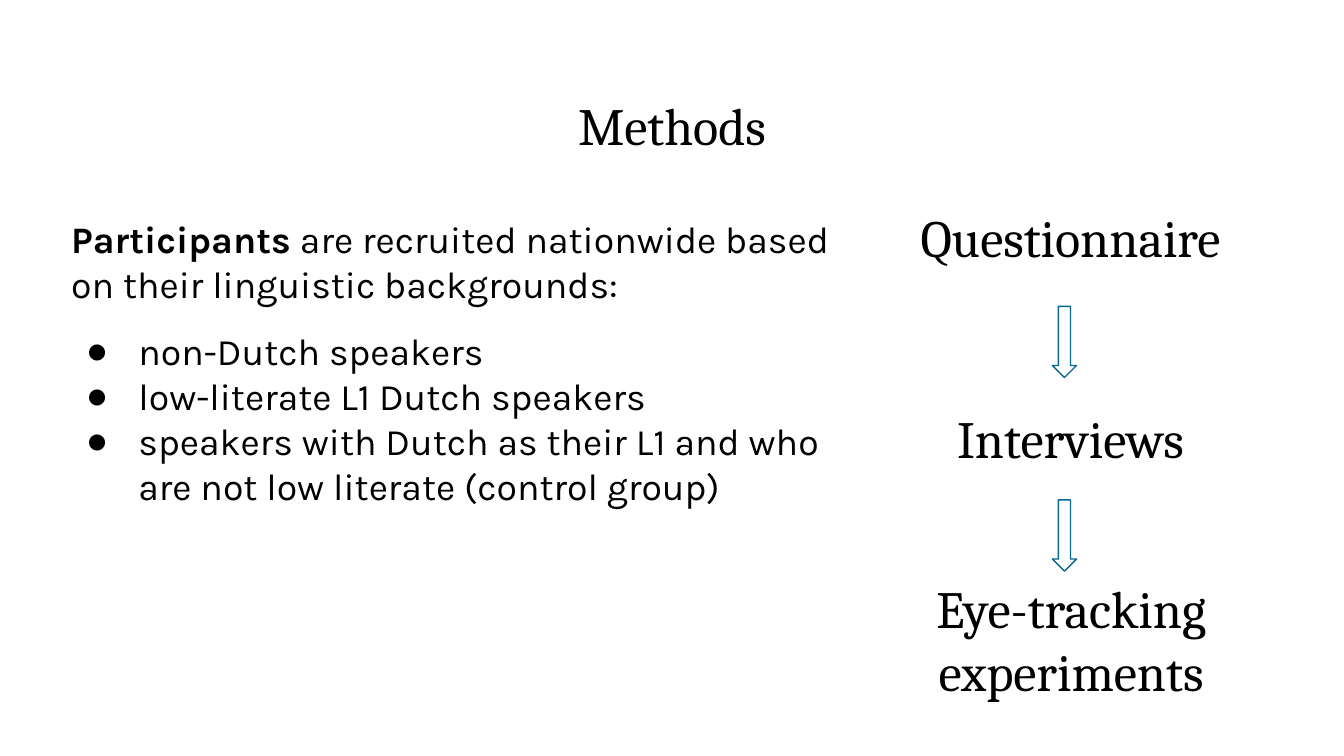
from lxml.etree import SubElement
from pptx import Presentation
from pptx.dml.color import RGBColor
from pptx.enum.shapes import MSO_SHAPE
from pptx.enum.text import MSO_ANCHOR, MSO_AUTO_SIZE, PP_ALIGN
from pptx.oxml.ns import qn
from pptx.util import Inches, Pt

COLORS = {"text": "000000", "arrow_fill": "FFFFFF", "arrow_line": "06688E"}
HEADING_FONT, BODY_FONT = "Cambria", "Karla"

INTRO = ("Participants",
         " are recruited nationwide based on their linguistic backgrounds:")
GROUPS = [
    "non-Dutch speakers",
    "low-literate L1 Dutch speakers",
    "speakers with Dutch as their L1 and who are not low literate (control group)",
]
# Stage label, left, top, width
STAGES = [
    ("Questionnaire", 6.55, 1.43, 2.83),
    ("Interviews", 6.92, 2.92, 2.09),
    ("Eye-tracking experiments", 6.32, 4.19, 3.3),
]
ARROW_TOPS = [2.28, 3.72]


def color(name):
    return RGBColor.from_string(COLORS[name])


def place(shape, left, top, width, height):
    shape.left, shape.top = Inches(left), Inches(top)
    shape.width, shape.height = Inches(width), Inches(height)


def prepare_frame(frame):
    frame.word_wrap = True
    frame.auto_size = MSO_AUTO_SIZE.NONE
    frame.vertical_anchor = MSO_ANCHOR.TOP
    frame.margin_left = frame.margin_right = Inches(0.1)
    frame.margin_top = frame.margin_bottom = Inches(0.1)


def style_run(run, font, size, bold=False):
    run.font.name, run.font.size, run.font.bold = font, Pt(size), bold
    run.font.color.rgb = color("text")


def write_heading(shape, text):
    prepare_frame(shape.text_frame)
    paragraph = shape.text_frame.paragraphs[0]
    paragraph.text = text
    paragraph.alignment = PP_ALIGN.CENTER
    style_run(paragraph.runs[0], HEADING_FONT, 28)


def set_bullet(paragraph, bullet=None):
    properties = paragraph._p.get_or_add_pPr()
    properties.set("marL", str(Inches(0.5) if bullet else 0))
    properties.set("indent", str(Inches(-0.39) if bullet else 0))
    if bullet:
        bullet_color = SubElement(properties, qn("a:buClr"))
        SubElement(bullet_color, qn("a:srgbClr"), val=COLORS["text"])
        SubElement(properties, qn("a:buChar"), char=bullet)
    else:
        SubElement(properties, qn("a:buNone"))


def write_participants(body):
    frame = body.text_frame
    prepare_frame(frame)
    intro = frame.paragraphs[0]
    set_bullet(intro)
    intro.space_before = Pt(0)
    for index, part in enumerate(INTRO):
        run = intro.add_run()
        run.text = part
        style_run(run, BODY_FONT, 20, bold=index == 0)

    for index, group in enumerate(GROUPS):
        item = frame.add_paragraph()
        item.text = group
        set_bullet(item, "●")
        item.space_before = Pt(12 if index == 0 else 0)
        style_run(item.runs[0], BODY_FONT, 20)


def add_stage(slide, label, left, top, width):
    stage = slide.shapes.add_textbox(
        Inches(left), Inches(top), Inches(width), Inches(0.53))
    write_heading(stage, label)


def add_down_arrow(slide, top):
    arrow = slide.shapes.add_shape(
        MSO_SHAPE.DOWN_ARROW, Inches(7.83), Inches(top), Inches(0.18), Inches(0.53))
    arrow.shadow.inherit = False
    arrow.fill.solid()
    arrow.fill.fore_color.rgb = color("arrow_fill")
    arrow.line.color.rgb = color("arrow_line")
    arrow.line.width = Pt(0.75)


def main():
    # Widescreen slide, 16:9
    presentation = Presentation()
    presentation.slide_width = Inches(10)
    presentation.slide_height = Inches(10 * 9 / 16)
    slide = presentation.slides.add_slide(presentation.slide_layouts[1])

    # Title and participants
    title, participants = slide.shapes.title, slide.placeholders[1]
    place(title, 0.78, 0.59, 8.44, 0.63)
    write_heading(title, "Methods")
    place(participants, 0.43, 1.51, 5.88, 0.69)
    write_participants(participants)

    # Research stages, joined by arrows
    for stage in STAGES:
        add_stage(slide, *stage)
    for top in ARROW_TOPS:
        add_down_arrow(slide, top)

    presentation.save("out.pptx")


if __name__ == "__main__":
    main()
